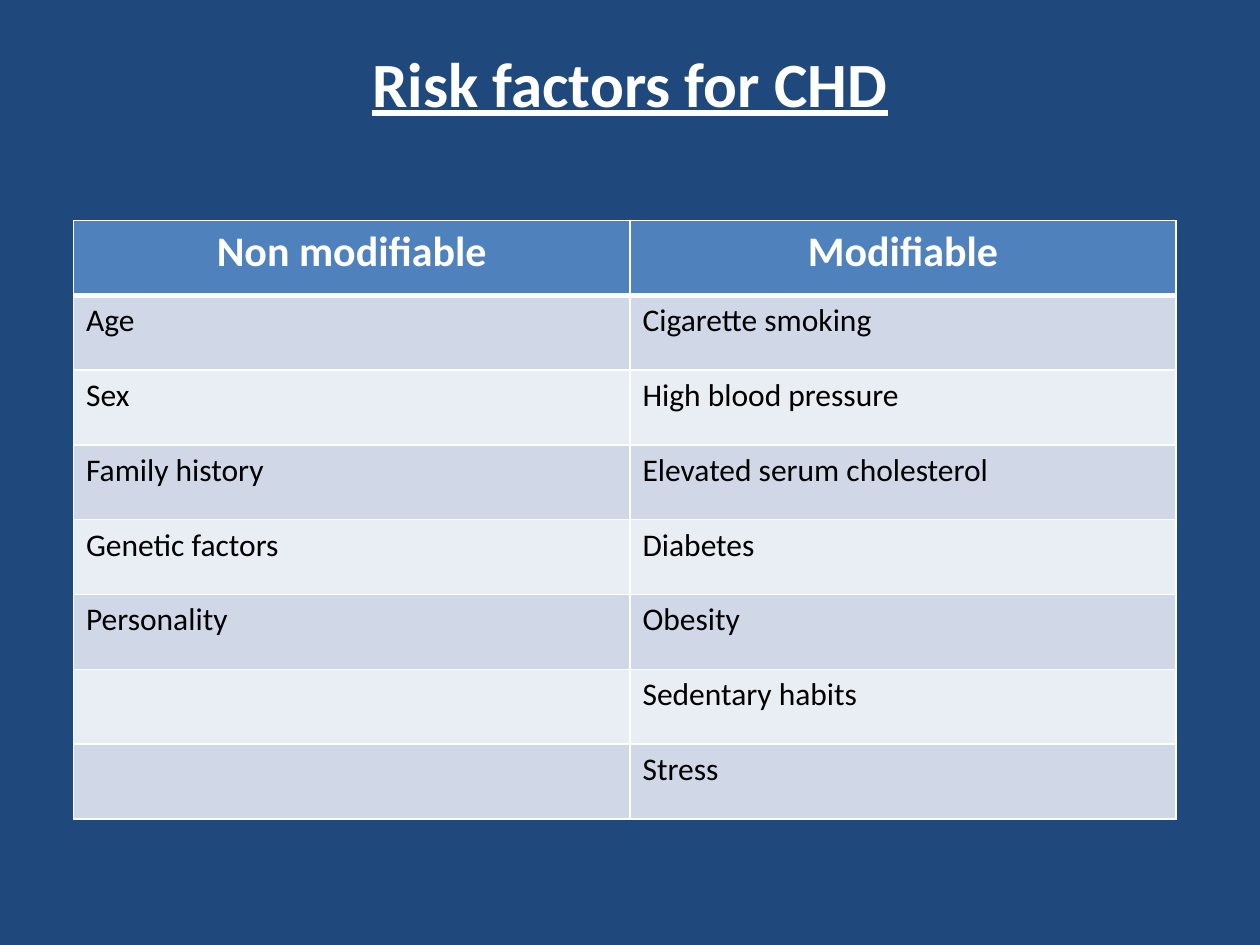
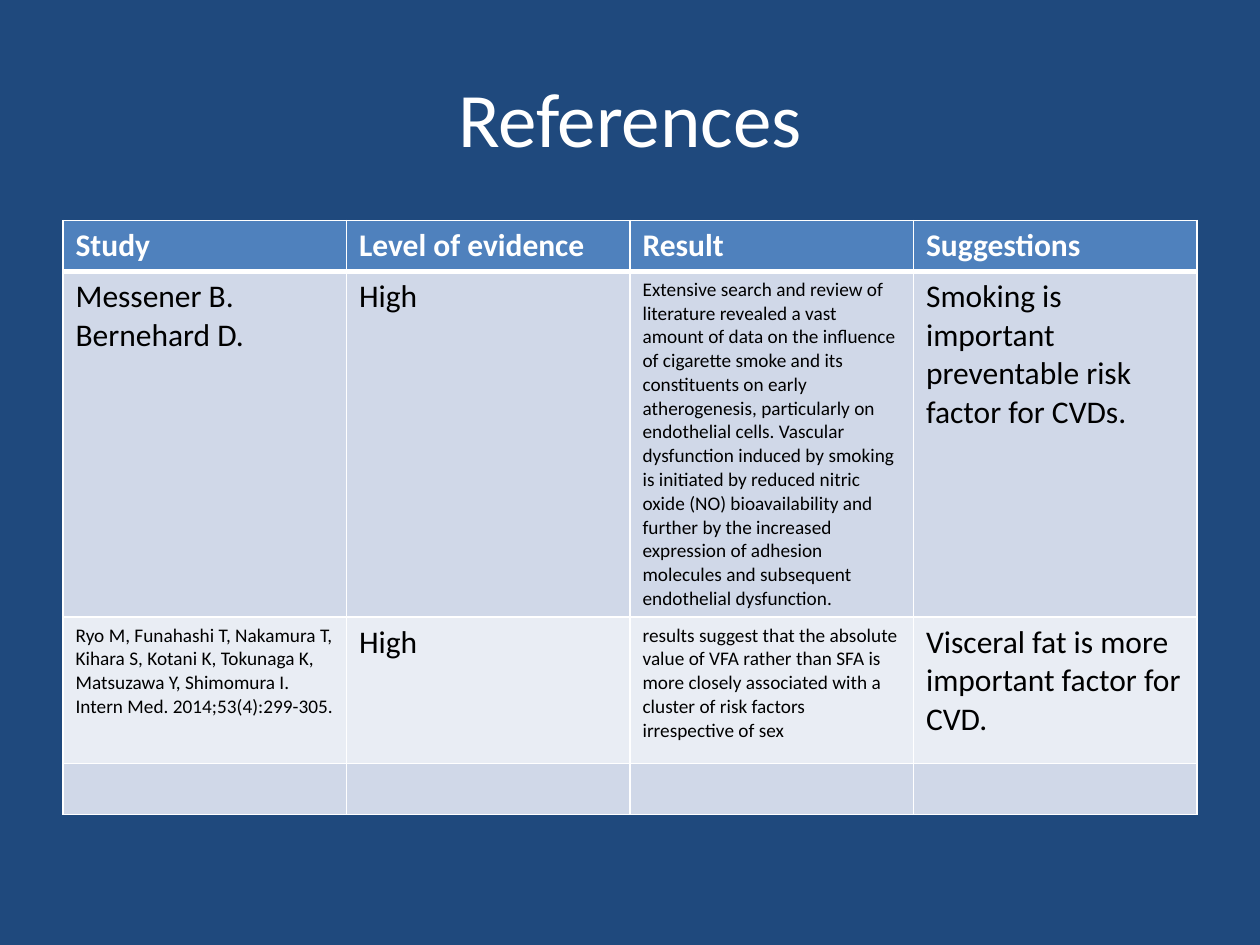
from dataclasses import dataclass

from lxml import etree
from pptx import Presentation
from pptx.dml.color import RGBColor
from pptx.enum import text
from pptx.oxml import ns
from pptx.util import Pt

# Shared look
NAVY = RGBColor(0x1F, 0x49, 0x7D)
BLUE = RGBColor(0x4F, 0x81, 0xBD)
BAND_DARK = RGBColor(0xD0, 0xD8, 0xE8)
BAND_LIGHT = RGBColor(0xE9, 0xED, 0xF4)
WHITE = RGBColor(0xFF, 0xFF, 0xFF)
BLACK = RGBColor(0x00, 0x00, 0x00)
FONT = "Calibri"
MARGIN, TITLE_TOP, TITLE_WIDTH, TABLE_TOP = 36, 21.6, 648, 126
THIN, THICK = 1, 3
BODY_SIZE, SMALL_SIZE = 18, 11
TITLE_ONLY = 5


@dataclass(frozen=True)
class Title:
    wording: str
    height: float
    size: float
    strong: bool = False  # bold and underlined


@dataclass(frozen=True)
class Entry:
    wording: str = ""  # one paragraph a line
    size: float = BODY_SIZE


@dataclass(frozen=True)
class Grid:
    left: float
    widths: list[float]
    heights: list[float]
    header: list[str]
    rows: list[list[Entry]]
    header_size: float = BODY_SIZE
    header_align: text.PP_ALIGN = text.PP_ALIGN.LEFT


def style_paragraph(para, size: float, color: RGBColor, bold: bool,
                    align: text.PP_ALIGN) -> None:
    para.alignment = align
    para.font.name = FONT
    para.font.size = Pt(size)
    para.font.bold = bold
    para.font.color.rgb = color


def add_borders(cell, top: float, bottom: float) -> None:
    properties = cell._tc.get_or_add_tcPr()
    for side, width in (("L", THIN), ("R", THIN), ("T", top), ("B", bottom)):
        line = etree.SubElement(properties, ns.qn(f"a:ln{side}"), w=str(Pt(width)))
        fill = etree.SubElement(line, ns.qn("a:solidFill"))
        etree.SubElement(fill, ns.qn("a:srgbClr"), val=str(WHITE))


def add_title(page, title: Title) -> None:
    box = page.shapes.title
    box.left, box.top = Pt(MARGIN), Pt(TITLE_TOP)
    box.width, box.height = Pt(TITLE_WIDTH), Pt(title.height)
    box.text_frame.text = title.wording
    box.text_frame.vertical_anchor = text.MSO_ANCHOR.MIDDLE
    para = box.text_frame.paragraphs[0]
    style_paragraph(para, title.size, WHITE, title.strong, text.PP_ALIGN.CENTER)
    para.font.underline = title.strong


def add_grid(page, grid: Grid) -> None:
    table = page.shapes.add_table(
        len(grid.heights), len(grid.widths), Pt(grid.left), Pt(TABLE_TOP),
        Pt(sum(grid.widths)), Pt(sum(grid.heights))).table
    for column, width in zip(table.columns, grid.widths):
        column.width = Pt(width)
    for row, height in zip(table.rows, grid.heights):
        row.height = Pt(height)

    header = [Entry(wording, grid.header_size) for wording in grid.header]
    for row_number, entries in enumerate([header, *grid.rows]):
        is_header = row_number == 0
        band = BAND_DARK if row_number % 2 else BAND_LIGHT
        for column_number, entry in enumerate(entries):
            cell = table.cell(row_number, column_number)
            add_borders(cell, THICK if row_number == 1 else THIN,
                        THICK if is_header else THIN)
            cell.fill.solid()
            cell.fill.fore_color.rgb = BLUE if is_header else band
            cell.text_frame.text = entry.wording
            for para in cell.text_frame.paragraphs:
                style_paragraph(para, entry.size, WHITE if is_header else BLACK, is_header,
                                grid.header_align if is_header else text.PP_ALIGN.LEFT)


# Content
RISK_FACTORS = Grid(
    left=42, widths=[318, 312], heights=[42.75] * 8,
    header=["Non modifiable", "Modifiable"],
    header_size=24, header_align=text.PP_ALIGN.CENTER,
    rows=[[Entry(fixed), Entry(modifiable)] for fixed, modifiable in (
        ("Age", "Cigarette smoking"),
        ("Sex", "High blood pressure"),
        ("Family history", "Elevated serum cholesterol"),
        ("Genetic factors", "Diabetes"),
        ("Personality", "Obesity"),
        ("", "Sedentary habits"),
        ("", "Stress"),
    )])

REFERENCES = Grid(
    left=MARGIN, widths=[162] * 4, heights=[29.2, 197.5, 83.5, 29.2],
    header=["Study", "Level of evidence", "Result", "Suggestions"],
    rows=[
        [Entry("Messener B.\nBernehard D."),
         Entry("High"),
         Entry("Extensive search and review of literature revealed a vast amount of data "
               "on the influence of cigarette smoke and its constituents on early "
               "atherogenesis, particularly on endothelial cells. Vascular dysfunction "
               "induced by smoking is initiated by reduced nitric oxide (NO) "
               "bioavailability and further by the increased expression of adhesion "
               "molecules and subsequent endothelial dysfunction.", SMALL_SIZE),
         Entry("Smoking is important preventable risk factor for CVDs.")],
        [Entry("Ryo M, Funahashi T, Nakamura T, Kihara S, Kotani K, Tokunaga K, "
               "Matsuzawa Y, Shimomura I.\nIntern Med. 2014;53(4):299-305.", SMALL_SIZE),
         Entry("High"),
         Entry("results suggest that the absolute value of VFA rather than SFA is more "
               "closely associated with a cluster of risk factors irrespective of sex",
               SMALL_SIZE),
         Entry("Visceral fat is more important factor for CVD.")],
        [Entry()] * 4,
    ])

PAGES = [
    (Title("Risk factors for CHD", height=50.4, size=36, strong=True), RISK_FACTORS),
    (Title("References", height=90, size=44), REFERENCES),
]


def main() -> None:
    deck = Presentation()
    deck.slide_width, deck.slide_height = Pt(720), Pt(540)
    background = deck.slide_master.background.fill
    background.solid()
    background.fore_color.rgb = NAVY
    for title, grid in PAGES:
        page = deck.slides.add_slide(deck.slide_layouts[TITLE_ONLY])
        add_title(page, title)
        add_grid(page, grid)
    deck.save("out.pptx")


if __name__ == "__main__":
    main()
